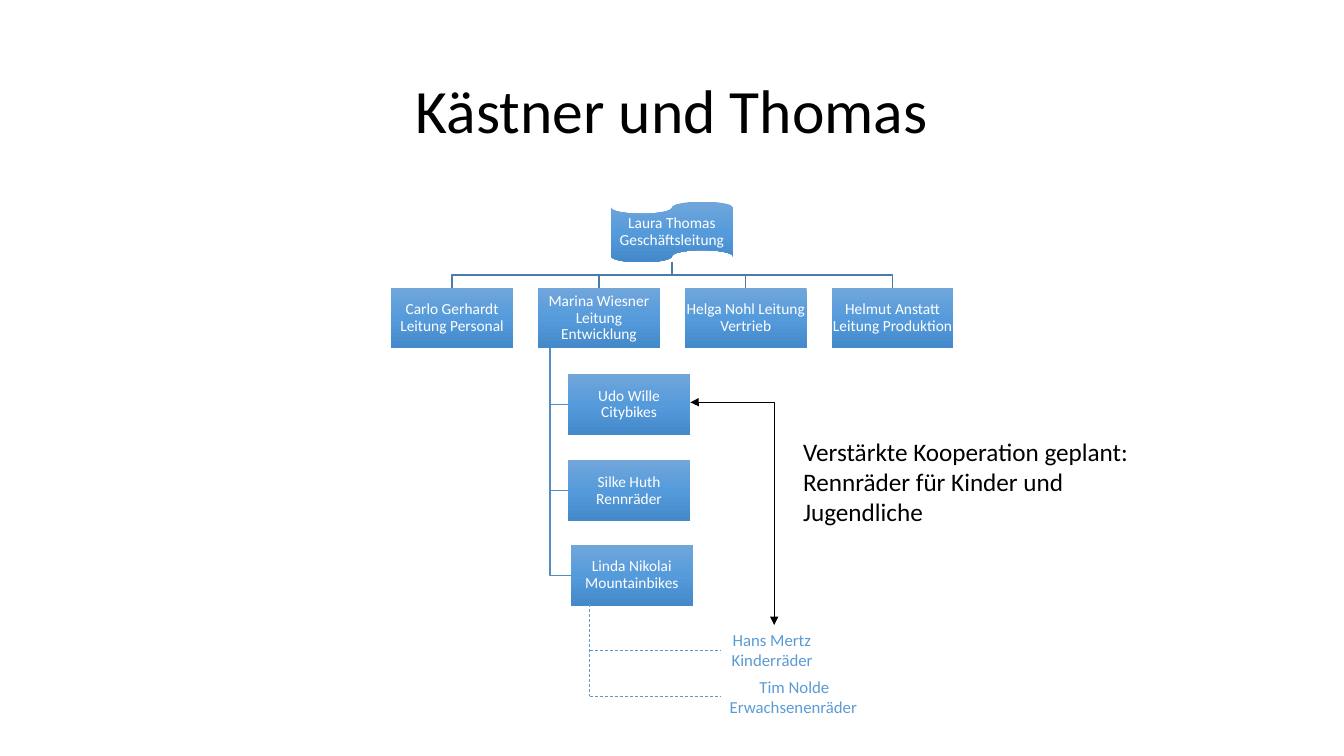
"""Build the organisation chart slide of Kästner und Thomas."""
import copy

import pptx
import pptx.dml.color
import pptx.enum.dml
import pptx.enum.shapes
import pptx.enum.text
import pptx.oxml.ns
import pptx.oxml.xmlchemy
import pptx.util

Cm = pptx.util.Cm
Pt = pptx.util.Pt
RGBColor = pptx.dml.color.RGBColor
MSO_SHAPE = pptx.enum.shapes.MSO_SHAPE
MSO_CONNECTOR = pptx.enum.shapes.MSO_CONNECTOR
PP_ALIGN = pptx.enum.text.PP_ALIGN
OxmlElement = pptx.oxml.xmlchemy.OxmlElement
qn = pptx.oxml.ns.qn

BLACK = RGBColor(0x00, 0x00, 0x00)
WHITE = RGBColor(0xFF, 0xFF, 0xFF)
ACCENT = RGBColor(0x5B, 0x9B, 0xD5)
UPPER_BRANCH = RGBColor(0x49, 0x7C, 0xAB)
LOWER_BRANCH = RGBColor(0x53, 0x8D, 0xC1)
BOX_GRADIENT = (
    (0, RGBColor(0x71, 0xA6, 0xDB)),
    (0.5, RGBColor(0x55, 0x9B, 0xDB)),
    (1, RGBColor(0x44, 0x8A, 0xCA)),
)

BOX_WIDTH, BOX_HEIGHT = 3.07, 1.53
CHIEF_LEFT, CHIEF_TOP = 15.4, 5.08
DEPARTMENT_LEFT, DEPARTMENT_TOP, DEPARTMENT_STEP = 9.86, 7.25, 3.7
TEAM_TRUNK = 13.86
PROJECT_TRUNK, PROJECT_END = 14.86, 18.14

DEPARTMENTS = (
    "Carlo Gerhardt Leitung Personal",
    "Marina Wiesner Leitung Entwicklung",
    "Helga Nohl Leitung Vertrieb",
    "Helmut Anstatt Leitung Produktion",
)
TEAMS = (
    ("Udo Wille Citybikes", 14.32, 9.43),
    ("Silke Huth Rennräder", 14.32, 11.6),
    ("Linda Nikolai Mountainbikes", 14.39, 13.73),
)

MIDDLE = pptx.enum.text.MSO_ANCHOR.MIDDLE
BOX_FRAME = {
    "word_wrap": True, "vertical_anchor": MIDDLE,
    "margin_left": Cm(0.02), "margin_right": Cm(0.02),
    "margin_top": Cm(0.02), "margin_bottom": Cm(0.02),
}
LABEL_FRAME = {
    "word_wrap": False,
    "auto_size": pptx.enum.text.MSO_AUTO_SIZE.SHAPE_TO_FIT_TEXT,
}
BOX_PARAGRAPH = {"alignment": PP_ALIGN.CENTER, "line_spacing": 0.9, "space_after": Pt(4)}
TITLE_PARAGRAPH = {"alignment": PP_ALIGN.CENTER, "line_spacing": 0.9}


def set_values(target, values):
    """Set every attribute named in values on the target."""
    for name, value in values.items():
        setattr(target, name, value)


def format_text(paragraph, text, size, color, values):
    """Fill a paragraph with one formatted run."""
    set_values(paragraph, values)
    run = paragraph.add_run()
    run.text = text
    set_values(run.font, {"name": "Calibri", "size": Pt(size)})
    run.font.color.rgb = color


def add_title(slide, text):
    """Place and format the title placeholder."""
    title = slide.shapes.title
    set_values(title, {"left": Cm(2.33), "top": Cm(1.01),
                       "width": Cm(29.21), "height": Cm(3.68)})
    title.text_frame.vertical_anchor = MIDDLE
    format_text(title.text_frame.paragraphs[0], text, 44, BLACK, TITLE_PARAGRAPH)


def add_box(slide, text, left, top, preset=MSO_SHAPE.RECTANGLE):
    """Add a person's box with a vertical gradient."""
    shape = slide.shapes.add_shape(
        preset, Cm(left), Cm(top), Cm(BOX_WIDTH), Cm(BOX_HEIGHT))
    shape.shadow.inherit = False
    shape.line.fill.background()
    shape.fill.gradient()
    shape.fill.gradient_angle = 270
    stop_list = shape._element.spPr.find(".//" + qn("a:gsLst"))
    stop_list.append(copy.deepcopy(stop_list[0]))
    for stop, (position, color) in zip(shape.fill.gradient_stops, BOX_GRADIENT):
        stop.position = position
        stop.color.rgb = color
    set_values(shape.text_frame, BOX_FRAME)
    format_text(shape.text_frame.paragraphs[0], text, 11, WHITE, BOX_PARAGRAPH)


def add_branch(slide, points, color):
    """Add an open angled line through the points."""
    vertices = [(Cm(x), Cm(y)) for x, y in points]
    builder = slide.shapes.build_freeform(*vertices[0])
    builder.add_line_segments(vertices[1:], close=False)
    shape = builder.convert_to_shape()
    shape.shadow.inherit = False
    shape.fill.background()
    shape.line.color.rgb = color
    shape.line.width = Pt(1)


def add_line(slide, kind, begin, end, color):
    """Add a thin connector without a shadow."""
    connector = slide.shapes.add_connector(
        kind, Cm(begin[0]), Cm(begin[1]), Cm(end[0]), Cm(end[1]))
    connector.line.color.rgb = color
    connector.line.width = Pt(0.5)
    connector._element.spPr.append(OxmlElement("a:effectLst"))
    return connector


def add_dashed_line(slide, begin, end):
    """Add a dashed project line."""
    connector = add_line(slide, MSO_CONNECTOR.STRAIGHT, begin, end, ACCENT)
    connector.line.dash_style = pptx.enum.dml.MSO_LINE.DASH


def add_cooperation_arrow(slide):
    """Add the elbow with an arrowhead at both ends."""
    connector = add_line(
        slide, MSO_CONNECTOR.ELBOW, (21.26, 11.89), (15.65, 14.0), BLACK)
    properties = connector._element.spPr
    properties.find(qn("a:xfrm")).set("rot", str(270 * 60000))
    guide = OxmlElement("a:gd")
    guide.set("name", "adj1")
    guide.set("fmla", "val -100")
    properties.find(".//" + qn("a:avLst")).append(guide)
    for tag in ("a:headEnd", "a:tailEnd"):
        arrowhead = OxmlElement(tag)
        arrowhead.set("type", "triangle")
        properties.find(qn("a:ln")).append(arrowhead)


def add_label(slide, lines, box, size, color, first_alignment=PP_ALIGN.LEFT):
    """Add a text box with one paragraph per line."""
    label = slide.shapes.add_textbox(*[Cm(value) for value in box])
    frame = label.text_frame
    set_values(frame, LABEL_FRAME)
    for index, text in enumerate(lines):
        paragraph = frame.add_paragraph() if index else frame.paragraphs[0]
        alignment = PP_ALIGN.LEFT if index else first_alignment
        format_text(paragraph, text, size, color, {"alignment": alignment})


def add_organisation(slide):
    """Add the branches and boxes of management, departments and teams."""
    half = BOX_WIDTH / 2
    chief_center = CHIEF_LEFT + half
    chief_bottom = CHIEF_TOP + BOX_HEIGHT
    fork = (chief_bottom + DEPARTMENT_TOP) / 2
    lefts = [DEPARTMENT_LEFT + DEPARTMENT_STEP * i for i in range(len(DEPARTMENTS))]
    for left in lefts:
        add_branch(slide, [(chief_center, chief_bottom), (chief_center, fork),
                           (left + half, fork), (left + half, DEPARTMENT_TOP)],
                   UPPER_BRANCH)
    for text, left, top in TEAMS:
        middle = top + BOX_HEIGHT / 2
        add_branch(slide, [(TEAM_TRUNK, DEPARTMENT_TOP + BOX_HEIGHT),
                           (TEAM_TRUNK, middle), (left, middle)], LOWER_BRANCH)
    add_box(slide, "Laura Thomas Geschäftsleitung", CHIEF_LEFT, CHIEF_TOP,
            MSO_SHAPE.FLOWCHART_PUNCHED_TAPE)
    for text, left in zip(DEPARTMENTS, lefts):
        add_box(slide, text, left, DEPARTMENT_TOP)
    for text, left, top in TEAMS:
        add_box(slide, text, left, top)


def main():
    """Create the presentation and save it."""
    presentation = pptx.Presentation()
    presentation.slide_width, presentation.slide_height = Cm(33.87), Cm(19.05)
    slide = presentation.slides.add_slide(presentation.slide_layouts[5])
    add_title(slide, "Kästner und Thomas")
    add_organisation(slide)
    add_cooperation_arrow(slide)
    add_dashed_line(slide, (PROJECT_TRUNK, 15.22), (PROJECT_TRUNK, 17.55))
    for y in (16.38, 17.55):
        add_dashed_line(slide, (PROJECT_TRUNK, y), (PROJECT_END, y))
    add_label(slide, ("Hans Mertz ", "Kinderräder"), (18.19, 15.75, 2.62, 1.27),
              12, ACCENT, PP_ALIGN.CENTER)
    add_label(slide, ("Tim Nolde", "Erwachsenenräder"), (18.14, 16.92, 3.76, 1.27),
              12, ACCENT, PP_ALIGN.CENTER)
    add_label(slide, ("Verstärkte Kooperation geplant:", "Rennräder für Kinder und",
                      "Jugendliche"), (19.99, 10.87, 8.79, 2.57), 18, BLACK)
    presentation.save("out.pptx")


if __name__ == "__main__":
    main()
